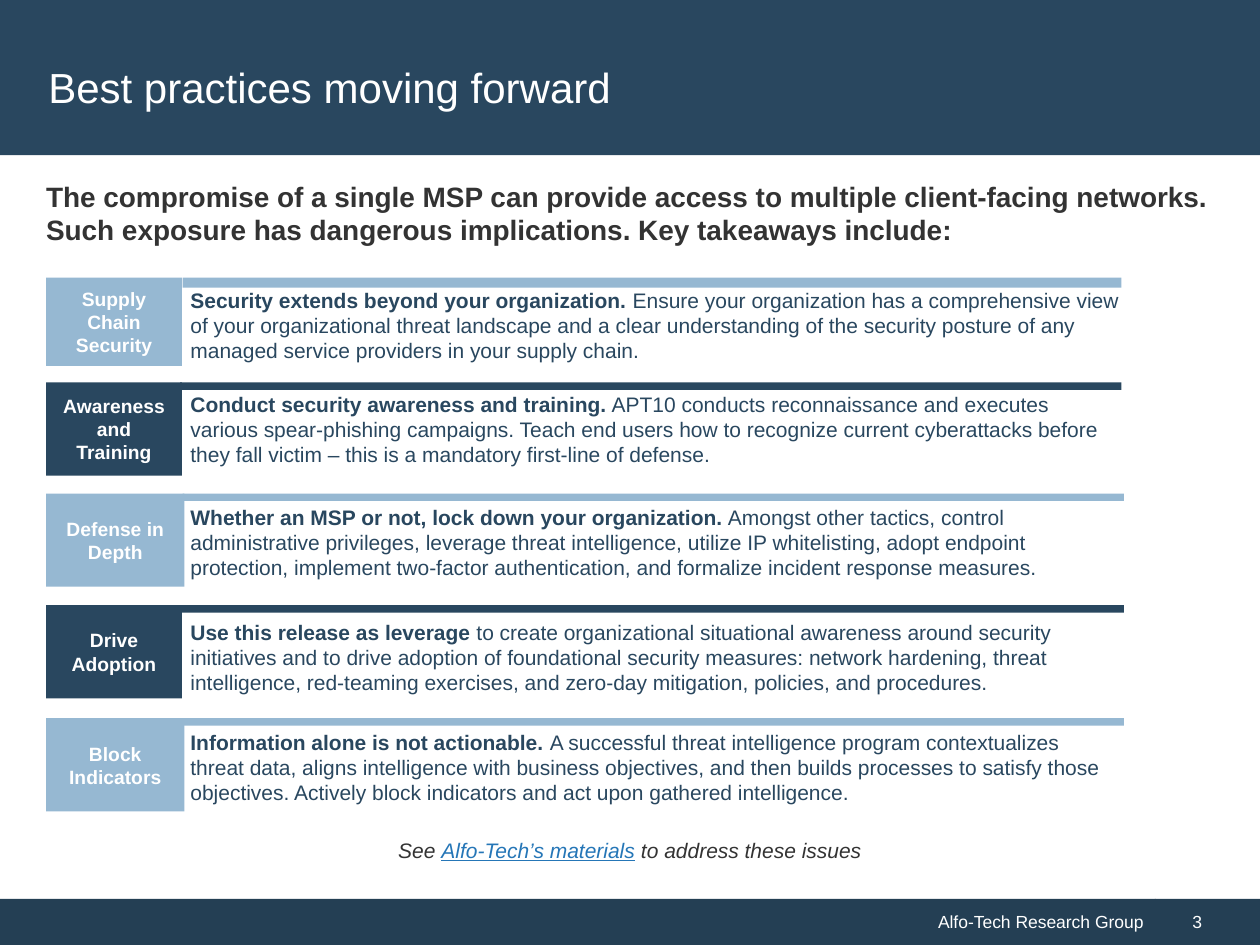
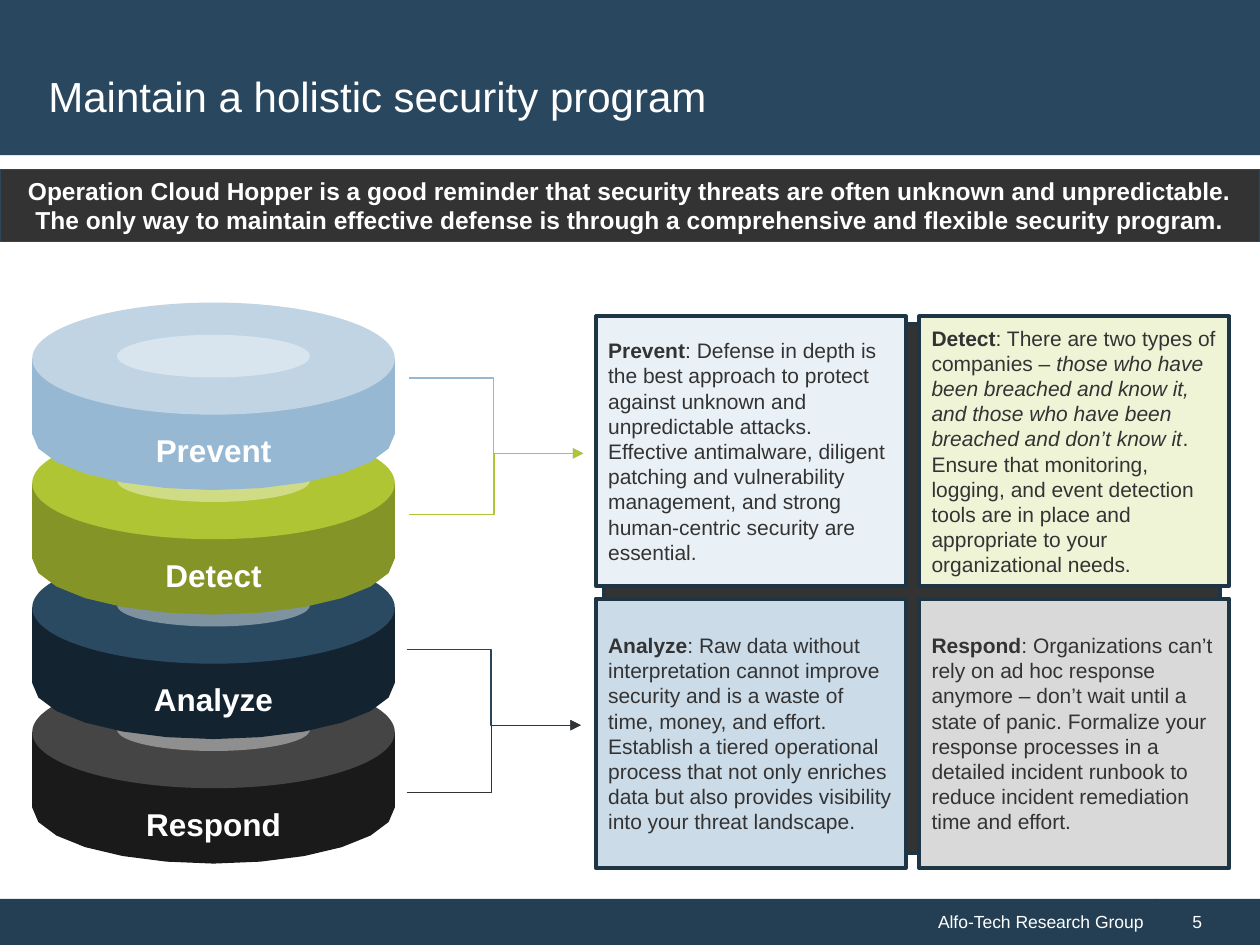
import math

import pptx
import pptx.dml.color
import pptx.enum.shapes
import pptx.enum.text
import pptx.oxml
import pptx.oxml.ns
import pptx.util
from pptx.util import Cm

RGBColor = pptx.dml.color.RGBColor
SHAPE = pptx.enum.shapes.MSO_SHAPE
ALIGN = pptx.enum.text.PP_ALIGN
ANCHOR = pptx.enum.text.MSO_ANCHOR
AUTO = pptx.enum.text.MSO_AUTO_SIZE

WHITE = RGBColor(0xFF, 0xFF, 0xFF)
CHARCOAL = RGBColor(0x33, 0x33, 0x33)
NAVY = RGBColor(0x29, 0x47, 0x5F)
FOOTER_NAVY = RGBColor(0x24, 0x3F, 0x54)
BORDER_NAVY = RGBColor(0x1E, 0x35, 0x46)
ARROW_NAVY = RGBColor(0x27, 0x46, 0x5E)
SKY = RGBColor(0x96, 0xB8, 0xD2)
LIGHT_SKY = RGBColor(0xC0, 0xD4, 0xE4)
LINK_BLUE = RGBColor(0x25, 0x76, 0xB7)
LIME = RGBColor(0xB0, 0xC5, 0x34)
OLIVE = RGBColor(0x84, 0x94, 0x27)
MIDNIGHT = RGBColor(0x14, 0x23, 0x30)
STEEL = RGBColor(0x2A, 0x4A, 0x62)
BLACK = RGBColor(0x1A, 0x1A, 0x1A)
GRAY = RGBColor(0x45, 0x45, 0x45)
PALE_BLUE = RGBColor(0xEA, 0xF1, 0xF6)
PALE_LIME = RGBColor(0xF0, 0xF4, 0xD6)
SOFT_BLUE = RGBColor(0xCB, 0xDB, 0xE8)
PALE_GRAY = RGBColor(0xD9, 0xD9, 0xD9)

FONT = "Arial"
COMPANY = "Alfo-Tech"
SLIDE_W, SLIDE_H = 25.4, 19.05
FOOT_Y, FOOT_SPLIT = 18.12, 23.28
FOOT_H = SLIDE_H - FOOT_Y

# label, top, label width, label height, bar left, bar height, bar right, colour,
# text top, text width, bold lead, remainder
PRACTICES = [
    ("Supply Chain Security", 5.6, 2.74, 1.78, 3.68, 0.2, 22.61, SKY, 5.67, 19.24,
     "Security extends beyond your organization. ",
     "Ensure your organization has a comprehensive view of your organizational threat "
     "landscape and a clear understanding of the security posture of any managed service "
     "providers in your supply chain."),
    ("Awareness and Training", 7.71, 2.74, 1.88, 3.63, 0.15, 22.61, NAVY, 7.77, 19.1,
     "Conduct security awareness and training.",
     " APT10 conducts reconnaissance and executes various spear-phishing campaigns. Teach "
     "end users how to recognize current cyberattacks before they fall victim – this is a "
     "mandatory first-line of defense."),
    ("Defense in Depth", 9.95, 2.79, 1.88, 3.68, 0.15, 22.66, SKY, 10.04, 19.1,
     "Whether an MSP or not, lock down your organization.",
     " Amongst other tactics, control administrative privileges, leverage threat "
     "intelligence, utilize IP whitelisting, adopt endpoint protection, implement "
     "two-factor authentication, and formalize incident response measures."),
    ("Drive Adoption", 12.2, 2.74, 1.88, 3.63, 0.15, 22.66, NAVY, 12.36, 19.0,
     "Use this release as leverage ",
     "to create organizational situational awareness around security initiatives and to "
     "drive adoption of foundational security measures: network hardening, threat "
     "intelligence, red-teaming exercises, and zero-day mitigation, policies, and "
     "procedures."),
    ("Block Indicators", 14.48, 2.79, 1.88, 3.68, 0.15, 22.66, SKY, 14.58, 19.1,
     "Information alone is not actionable. ",
     "A successful threat intelligence program contextualizes threat data, aligns "
     "intelligence with business objectives, and then builds processes to satisfy those "
     "objectives. Actively block indicators and act upon gathered intelligence."),
]

# name, side colour, top colour, label width
DISCS = [
    ("Prevent", SKY, LIGHT_SKY, 2.87),
    ("Detect", OLIVE, LIME, 2.46),
    ("Analyze", MIDNIGHT, STEEL, 2.95),
    ("Respond", BLACK, GRAY, 3.25),
]

CARDS = [
    (PALE_BLUE, [("Prevent", "b"), (
        ": Defense in depth is the best approach to protect against unknown and "
        "unpredictable attacks. Effective antimalware, diligent patching and vulnerability "
        "management, and strong human-centric security are essential.", "")]),
    (PALE_LIME, [("Detect", "b"), (": There are two types of companies – ", ""), (
        "those who have been breached and know it, and those who have been breached and "
        "don’t know it", "i"), (
        ". Ensure that monitoring, logging, and event detection tools are in place and "
        "appropriate to your organizational needs.", "")]),
    (SOFT_BLUE, [("Analyze", "b"), (
        ": Raw data without interpretation cannot improve security and is a waste of time, "
        "money, and effort. Establish a tiered operational process that not only enriches "
        "data but also provides visibility into your threat landscape.", "")]),
    (PALE_GRAY, [("Respond", "b"), (
        ": Organizations can’t rely on ad hoc response anymore – don’t wait until a state "
        "of panic. Formalize your response processes in a detailed incident runbook to "
        "reduce incident remediation time and effort.", "")]),
]

# start x, start y, end x, end y, bend position, colour
ARROWS = [
    (8.2, 13.09, 11.71, 14.62, 48400, ARROW_NAVY),
    (8.2, 15.98, 11.71, 14.62, 48700, CHARCOAL),
    (8.25, 7.62, 11.76, 9.14, 48400, SKY),
    (8.25, 10.37, 11.76, 9.14, 48700, LIME),
]


def write(tf, runs, size, color, align=ALIGN.LEFT, before=0, after=0):
    """Fill a frame with one paragraph of (text, style letters) runs."""
    p = tf.paragraphs[0]
    p.alignment = align
    p.space_before, p.space_after = pptx.util.Pt(before), pptx.util.Pt(after)
    for text, style in runs:
        r = p.add_run()
        r.text = text
        r.font.name, r.font.size = FONT, pptx.util.Pt(size)
        r.font.bold, r.font.italic = "b" in style, "i" in style
        r.font.underline = "u" in style
        r.font.color.rgb = LINK_BLUE if "u" in style else color


def paint(sp, fill, line=None, width=0):
    sp.shadow.inherit = False
    sp.fill.solid()
    sp.fill.fore_color.rgb = fill
    if line is None:
        sp.line.fill.background()
    else:
        sp.line.color.rgb = line
        sp.line.width = pptx.util.Pt(width)


def add_box(shapes, x, y, w, h, fill, line=None, width=0, kind=SHAPE.RECTANGLE):
    sp = shapes.add_shape(kind, Cm(x), Cm(y), Cm(w), Cm(h))
    paint(sp, fill, line, width)
    return sp


def add_text(shapes, x, y, w, h, runs, size, color, wrap=True, anchor=ANCHOR.TOP, **fmt):
    tf = shapes.add_textbox(Cm(x), Cm(y), Cm(w), Cm(h)).text_frame
    tf.word_wrap = wrap
    tf.auto_size = AUTO.SHAPE_TO_FIT_TEXT
    tf.vertical_anchor = anchor
    write(tf, runs, size, color, **fmt)


def dress_layout(layout, s):
    """Build the shared bands on a slide and move them to its layout."""
    title, *others = list(layout.placeholders)
    for ph in others:
        layout.shapes.element.remove(ph.element)
    header = add_box(s.shapes, 0, 0, SLIDE_W, 3.13, NAVY)
    # A slight overlap hides the seam beside the page number.
    footer = add_box(s.shapes, 0, FOOT_Y, FOOT_SPLIT + 0.02, FOOT_H, FOOTER_NAVY)
    write(footer.text_frame, [(f"{COMPANY} Research Group", "")], 10, WHITE, ALIGN.RIGHT)
    for band in (footer, header):
        title.element.addprevious(band.element)


def start_slide(prs, title, title_y, number):
    """Add a slide with its title and page number."""
    layout = prs.slide_layouts[5]
    s = prs.slides.add_slide(layout)
    if len(prs.slides) == 1:
        dress_layout(layout, s)
    sp = s.shapes.title
    sp.left, sp.top, sp.width, sp.height = Cm(0.72), Cm(title_y), Cm(23.95), Cm(2.44)
    sp.text_frame.vertical_anchor = ANCHOR.MIDDLE
    write(sp.text_frame, [(title, "")], 24, WHITE)
    page = add_box(s.shapes, FOOT_SPLIT, FOOT_Y, SLIDE_W - FOOT_SPLIT, FOOT_H, FOOTER_NAVY)
    page.text_frame.margin_left = Cm(0.76)
    write(page.text_frame, [(str(number), "")], 10, WHITE)
    return s


def add_practice(s, x, practice):
    (label, y, label_w, label_h, bar_x, bar_h, bar_right, color,
     text_y, text_w, lead, rest) = practice
    shapes = s.shapes.add_group_shape().shapes
    sp = add_box(shapes, x, y, label_w, label_h, color)
    write(sp.text_frame, [(label, "b")], 11, WHITE, ALIGN.CENTER)
    add_box(shapes, bar_x, y, bar_right - bar_x, bar_h, color)
    add_text(s.shapes, x + 2.66, text_y, text_w, 1.8, [(lead, "b"), (rest, "")],
             12, NAVY, before=5, after=7)


def add_disc(shapes, x, y, w, disc):
    """Draw one disc whose top ellipse fills the box starting at x, y."""
    name, side, top, label_w = disc
    top_h, side_h, steps = 2.26, 1.52, 12
    rx, ry = w / 2, top_h / 2
    rim_y = y + ry
    angles = [math.pi * i / steps for i in range(steps + 1)]
    arc = [(Cm(x + rx + rx * math.cos(a)), Cm(rim_y + side_h + ry * math.sin(a)))
           for a in angles]
    outline = shapes.build_freeform(Cm(x), Cm(rim_y))
    outline.add_line_segments([(Cm(x + w), Cm(rim_y))] + arc, close=True)
    paint(outline.convert_to_shape(), side)
    add_box(shapes, x, y, w, top_h, top, kind=SHAPE.OVAL)

    shine_w = 3.89
    shine = add_box(shapes, x + (w - shine_w) / 2, y + 0.65, shine_w, 0.86, WHITE,
                    kind=SHAPE.OVAL)
    rgb = shine.element.spPr.find(".//" + pptx.oxml.ns.qn("a:srgbClr"))
    rgb.append(pptx.oxml.parse_xml(
        f'<a:alpha {pptx.oxml.ns.nsdecls("a")} val="40000"/>'))
    add_text(shapes, x + (w - label_w) / 2, y + 2.47, label_w, 1.02, [(name, "b")],
             18, WHITE, wrap=False, anchor=ANCHOR.MIDDLE, align=ALIGN.CENTER)


def add_disc_stack(s, x, y, w, pitch):
    shapes = s.shapes.add_group_shape().shapes
    for i, disc in reversed(list(enumerate(DISCS))):
        add_disc(shapes, x, y + i * pitch, w, disc)


def add_cards(s, x, y):
    """Draw a two by two grid of cards on a dark backing plate."""
    shapes = s.shapes.add_group_shape().shapes
    add_box(shapes, x + 0.17, y + 0.16, 12.42, 10.65, CHARCOAL, BORDER_NAVY, 2.25)
    for i, (fill, runs) in enumerate(CARDS):
        row, col = divmod(i, 2)
        sp = add_box(shapes, x + col * 6.52, y + row * 5.69, 6.25, 5.43,
                     fill, BORDER_NAVY, 2.25)
        write(sp.text_frame, runs, 12, CHARCOAL)


def add_elbow_arrow(s, x1, y1, x2, y2, bend, color):
    c = s.shapes.add_connector(pptx.enum.shapes.MSO_CONNECTOR.ELBOW,
                               Cm(x1), Cm(y1), Cm(x2), Cm(y2))
    c.line.color.rgb = color
    c.line.width = pptx.util.Pt(0.75)
    ns = pptx.oxml.ns.nsdecls("a")
    spPr = c.element.spPr
    spPr.find(".//" + pptx.oxml.ns.qn("a:avLst")).append(
        pptx.oxml.parse_xml(f'<a:gd {ns} name="adj1" fmla="val {bend}"/>'))
    spPr.find(pptx.oxml.ns.qn("a:ln")).append(
        pptx.oxml.parse_xml(f'<a:tailEnd {ns} type="triangle"/>'))
    spPr.append(pptx.oxml.parse_xml(f"<a:effectLst {ns}/>"))


def add_practices_slide(prs):
    s = start_slide(prs, "Best practices moving forward", 0.53, 3)
    add_text(s.shapes, 0.68, 3.49, 24, 1.63, [(
        "The compromise of a single MSP can provide access to multiple client-facing "
        "networks. Such exposure has dangerous implications. Key takeaways include:", "b")],
        16, CHARCOAL, before=5, after=7)
    for practice in PRACTICES:
        add_practice(s, 0.93, practice)
    add_text(s.shapes, 6.3, 16.76, 12.8, 0.76,
             [("See ", "i"), (f"{COMPANY}’s materials", "iu"),
              (" to address these issues", "i")], 12, CHARCOAL, align=ALIGN.CENTER)


def add_program_slide(prs):
    s = start_slide(prs, "Maintain a holistic security program", 0.71, 5)
    add_disc_stack(s, 0.65, 6.1, 7.31, 2.51)
    banner = add_box(s.shapes, 0, 3.42, SLIDE_W, 1.45, CHARCOAL, NAVY, 0.75)
    banner.text_frame.vertical_anchor = ANCHOR.TOP
    write(banner.text_frame, [(
        "Operation Cloud Hopper is a good reminder that security threats are often unknown "
        "and unpredictable. The only way to maintain effective defense is through a "
        "comprehensive and flexible security program.", "b")], 14, WHITE, ALIGN.CENTER)
    add_cards(s, 12.01, 6.38)
    for arrow in ARROWS:
        add_elbow_arrow(s, *arrow)


def main():
    prs = pptx.Presentation()
    prs.slide_width, prs.slide_height = Cm(SLIDE_W), Cm(SLIDE_H)
    add_practices_slide(prs)
    add_program_slide(prs)
    prs.save("out.pptx")


if __name__ == "__main__":
    main()
